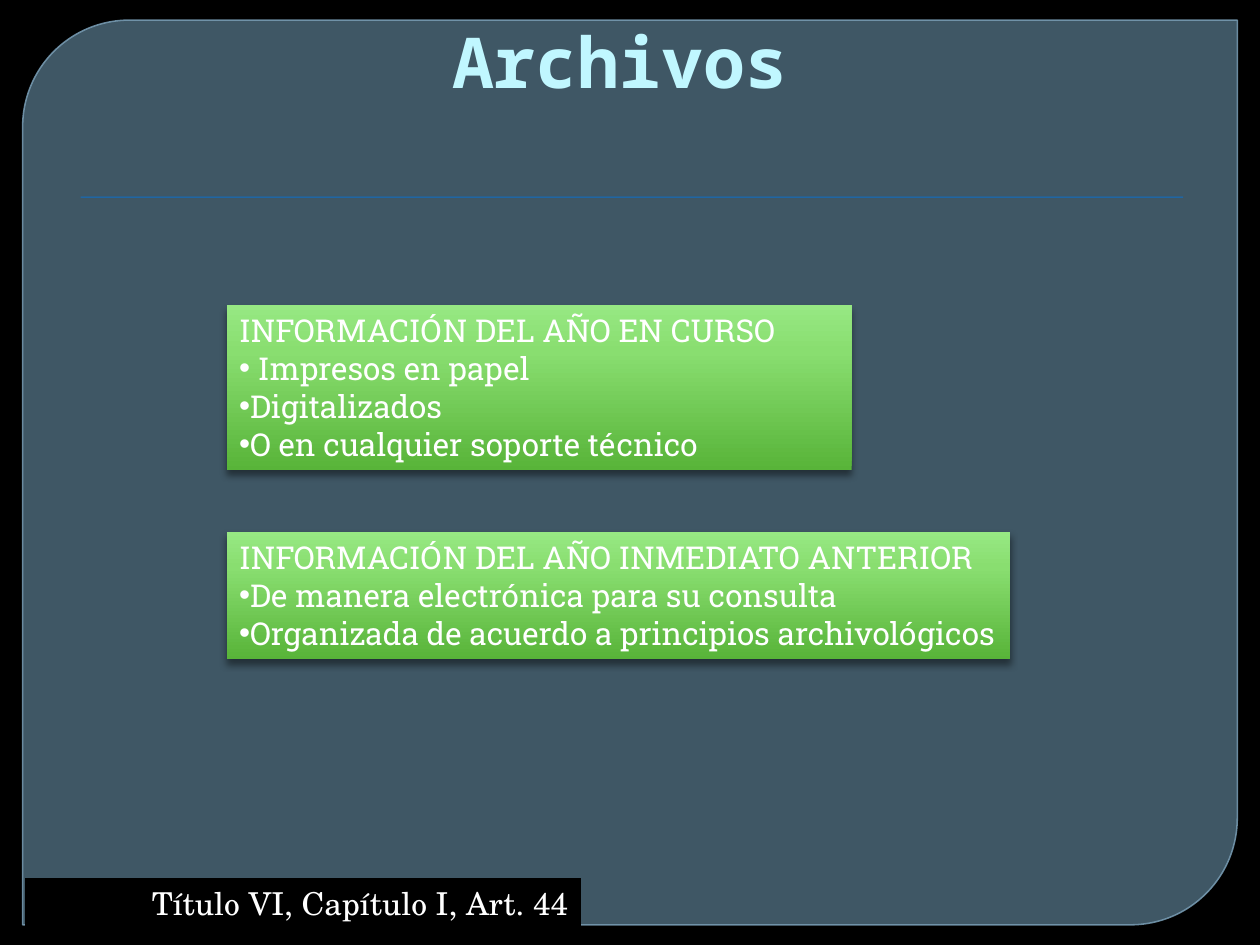
import pptx
import pptx.dml.color
import pptx.enum.shapes
import pptx.enum.text
import pptx.oxml
import pptx.oxml.ns
import pptx.util
from pptx.util import Inches

ALIGN = pptx.enum.text.PP_ALIGN
ANCHOR = pptx.enum.text.MSO_ANCHOR
SHAPE = pptx.enum.shapes.MSO_SHAPE
GREEN_STOPS = [(0, "58B439"), (72, "89DE70"), (100, "97E883")]


def color(value):
    return pptx.dml.color.RGBColor.from_string(value)


def add_xml(parent, markup):
    namespace = pptx.oxml.ns.nsdecls("a")
    element = pptx.oxml.parse_xml(markup.replace(" ", f" {namespace} ", 1))
    parent.append(element)


def set_alpha(color_format, percent):
    add_xml(color_format._xFill.find(pptx.oxml.ns.qn("a:srgbClr")),
            f'<a:alpha val="{percent * 1000}"/>')


def write_text(shape, lines, font="Roboto Slab", size=18, fill="FFFFFF", bold=False,
               align=ALIGN.LEFT, anchor=ANCHOR.TOP, bulleted=False, left_indent=0):
    frame = shape.text_frame
    frame.word_wrap = True
    frame.vertical_anchor = anchor
    for index, line in enumerate(lines):
        paragraph = frame.paragraphs[0] if index == 0 else frame.add_paragraph()
        paragraph.alignment = align
        properties = paragraph._p.get_or_add_pPr()
        properties.set("marL", str(Inches(left_indent)))
        properties.set("indent", "0")
        if bulleted and index:
            add_xml(properties, '<a:buFont typeface="Arial"/>')
            add_xml(properties, '<a:buChar char="•"/>')
        run = paragraph.add_run()
        run.text = line
        run.font.name = font
        run.font.size = pptx.util.Pt(size)
        run.font.bold = bold
        run.font.color.rgb = color(fill)


class SlideBuilder:
    """Draws the elements of one slide in a shared dark style."""

    def __init__(self, slide):
        self.slide = slide
        background = slide.background.fill
        background.solid()
        background.fore_color.rgb = color("000000")

    def box(self, left, top, width, height, fill=None, kind=SHAPE.RECTANGLE):
        shape = self.slide.shapes.add_shape(
            kind, Inches(left), Inches(top), Inches(width), Inches(height))
        shape.shadow.inherit = False
        shape.line.fill.background()
        if fill:
            shape.fill.solid()
            shape.fill.fore_color.rgb = color(fill)
        return shape

    def shadow(self, shape, alpha, blur, distance):
        effects = shape._element.spPr.find(pptx.oxml.ns.qn("a:effectLst"))
        add_xml(effects,
                f'<a:outerShdw blurRad="{pptx.util.Pt(blur)}" dist="{pptx.util.Pt(distance)}" '
                f'dir="5400000" rotWithShape="0"><a:srgbClr val="000000">'
                f'<a:alpha val="{alpha * 1000}"/></a:srgbClr></a:outerShdw>')

    def panel(self, left, top, width, height):
        shape = self.box(left, top, width, height, "61869C", SHAPE.ROUND_2_DIAG_RECTANGLE)
        shape.adjustments[0] = 0.118
        shape.adjustments[1] = 0
        shape.line.color.rgb = color("779BB2")
        shape.line.width = pptx.util.Pt(0.87)
        set_alpha(shape.fill.fore_color, 65)
        set_alpha(shape.line.color, 88)

    def rule(self, left, top, width):
        self.shadow(self.box(left, top, width, 0.01, "0F6FC6"), 75, 1, 1)

    def title(self, text, left, top, width, height):
        shape = self.slide.shapes.add_textbox(
            Inches(left), Inches(top), Inches(width), Inches(height))
        write_text(shape, [text], font="Noto Sans Mono", size=40, fill="C0F7FF", bold=True,
                   align=ALIGN.CENTER, anchor=ANCHOR.BOTTOM, left_indent=0.06)

    def card(self, lines, left, top, width, height):
        shape = self.box(left, top, width, height)
        shape.fill.gradient()
        shape.fill.gradient_angle = 90
        stops = shape._element.spPr.find(".//" + pptx.oxml.ns.qn("a:gsLst"))
        for stop in list(stops):
            stops.remove(stop)
        for position, value in GREEN_STOPS:
            add_xml(stops, f'<a:gs pos="{position * 1000}"><a:srgbClr val="{value}"/></a:gs>')
        self.shadow(shape, 43, 4, 3)
        write_text(shape, lines, bulleted=True)

    def footer(self, text, left, top, width, height):
        shape = self.box(left, top, width, height, "000000")
        write_text(shape, [text], font="TeX Gyre Schola", align=ALIGN.RIGHT)


def main():
    presentation = pptx.Presentation()
    presentation.slide_width = Inches(10)
    presentation.slide_height = Inches(7.5)
    builder = SlideBuilder(presentation.slides.add_slide(presentation.slide_layouts[6]))
    builder.panel(0.18, 0.16, 9.64, 7.18)
    builder.rule(0.64, 1.56, 8.75)
    builder.title("Archivos", 0.39, 0, 9, 0.86)
    builder.card(["INFORMACIÓN DEL AÑO EN CURSO", " Impresos en papel", "Digitalizados",
                  "O en cualquier soporte técnico"], 1.8, 2.42, 4.96, 1.31)
    builder.card(["INFORMACIÓN DEL AÑO INMEDIATO ANTERIOR",
                  "De manera electrónica para su consulta",
                  "Organizada de acuerdo a principios archivológicos"], 1.8, 4.22, 6.22, 1.01)
    builder.footer("Título VI, Capítulo I, Art. 44", 0.2, 6.97, 4.41, 0.4)
    presentation.save("out.pptx")


if __name__ == "__main__":
    main()
